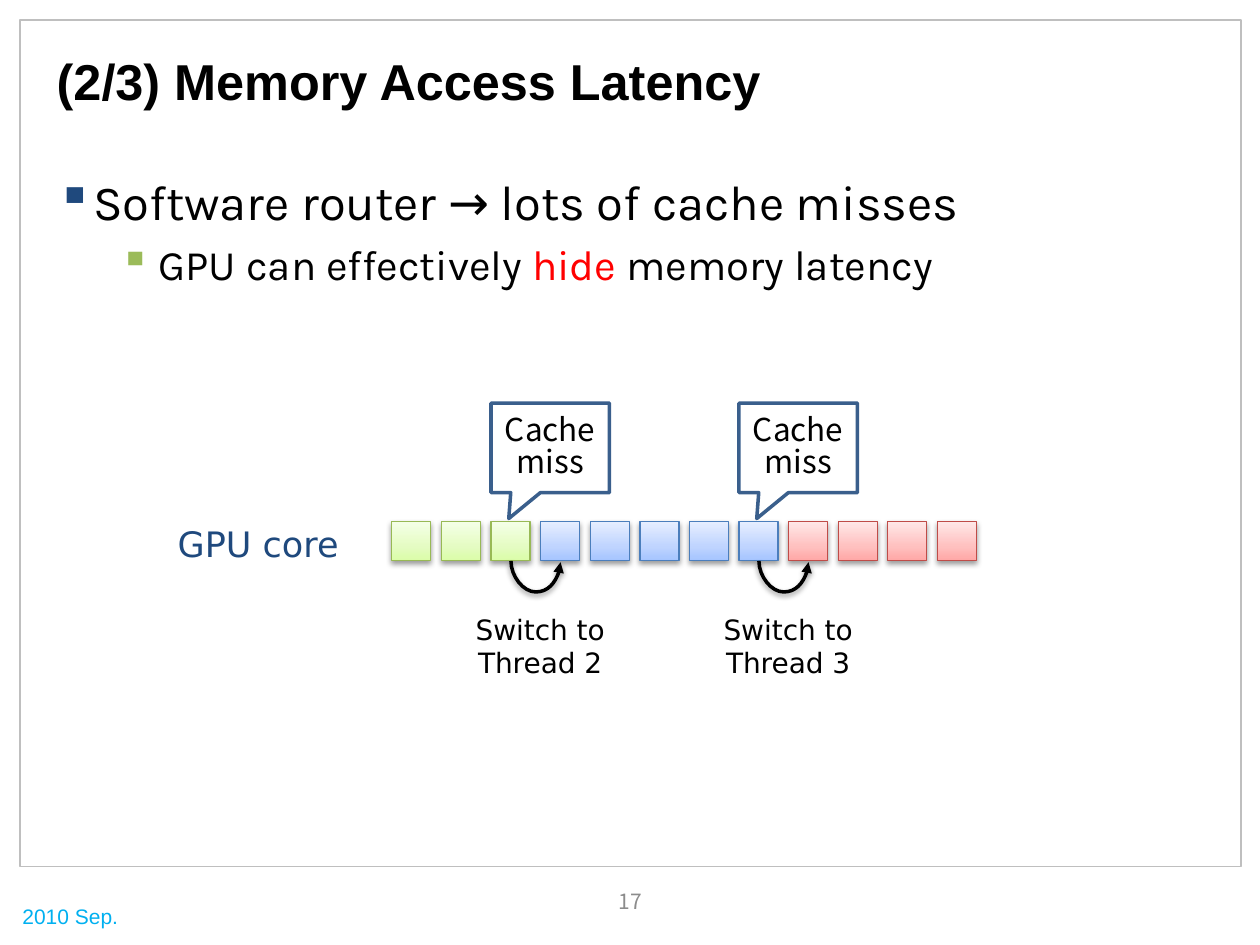
from lxml import etree
from pptx import Presentation
from pptx.dml.color import RGBColor
from pptx.enum.shapes import MSO_CONNECTOR, MSO_SHAPE
from pptx.enum.text import MSO_ANCHOR, PP_ALIGN
from pptx.oxml import parse_xml
from pptx.oxml.ns import nsdecls, qn
from pptx.util import Inches, Pt

TOP, MIDDLE, BOTTOM = MSO_ANCHOR.TOP, MSO_ANCHOR.MIDDLE, MSO_ANCHOR.BOTTOM
LEFT, CENTER = PP_ALIGN.LEFT, PP_ALIGN.CENTER
RECTANGLE = MSO_SHAPE.RECTANGLE
CALLOUT = MSO_SHAPE.RECTANGULAR_CALLOUT
CURVE = MSO_CONNECTOR.CURVE

COLORS = {
    "black": "000000", "navy": "1F497D", "olive": "9BBB59", "red": "FF0000",
    "date": "00B0F0", "number": "8C8C8C", "frame": "BFBFBF", "callout": "3A5F8C",
}
# Per thread: number of cells, line colour, gradient from bottom to top
THREADS = [
    (3, "98B955", ("DAFDA7", "E4FCC2", "F5FFE7")),
    (5, "4B7EBC", ("A4C4FF", "BFD4FF", "E6EEFF")),
    (4, "BF4C48", ("FFA6A5", "FFC0BF", "FFE7E7")),
]
GRADIENT_STOPS = (0, 35000, 100000)
CELL_LEFT, CELL_TOP, CELL_SIZE = 3.11, 4.14, 0.31
CELL_PITCH = 4.33 / 11


def rgb(color):
    return RGBColor.from_string(COLORS.get(color, color))


def format_font(font, color, **values):
    for attribute, value in values.items():
        setattr(font, attribute, value)
    font.color.rgb = rgb(color)


def add_label(slide, box, text, name, size, color, align=CENTER, anchor=TOP, wrap=True):
    label = slide.shapes.add_textbox(*map(Inches, box))
    frame = label.text_frame
    frame.word_wrap = wrap
    frame.vertical_anchor = anchor
    paragraph = frame.paragraphs[0]
    paragraph.text = text
    paragraph.alignment = align
    format_font(paragraph.font, color, name=name, size=Pt(size))


def add_box(slide, kind, box, line_color, line_width):
    shape = slide.shapes.add_shape(kind, *map(Inches, box))
    shape.shadow.inherit = False
    shape.fill.background()
    shape.line.color.rgb = rgb(line_color)
    shape.line.width = Pt(line_width)
    return shape


def add_shadow(properties):
    effects = properties.find(qn("a:effectLst"))
    if effects is None:
        effects = etree.SubElement(properties, qn("a:effectLst"))
    effects.append(parse_xml(
        f'<a:outerShdw {nsdecls("a")} blurRad="40000" dist="20000" dir="5400000" '
        f'rotWithShape="0"><a:srgbClr val="{COLORS["black"]}">'
        '<a:alpha val="38000"/></a:srgbClr></a:outerShdw>'))


def add_cell(slide, left, line_color, gradient):
    cell = add_box(slide, RECTANGLE, (left, CELL_TOP, CELL_SIZE, CELL_SIZE), line_color, 0.75)
    properties = cell._element.spPr
    stops = "".join(
        f'<a:gs pos="{position}"><a:srgbClr val="{color}"/></a:gs>'
        for position, color in zip(GRADIENT_STOPS, gradient))
    properties.replace(properties.find(qn("a:noFill")), parse_xml(
        f'<a:gradFill {nsdecls("a")} rotWithShape="1"><a:gsLst>{stops}</a:gsLst>'
        '<a:lin ang="16200000" scaled="0"/></a:gradFill>'))
    add_shadow(properties)


def add_switch_arrow(slide, left):
    # A flat connector turned by 270 degrees; its bend is 25 times its width
    arrow = slide.shapes.add_connector(
        CURVE, Inches(left + 0.01), Inches(4.26), Inches(left), Inches(4.26 + CELL_PITCH))
    arrow.line.color.rgb = rgb("black")
    arrow.line.width = Pt(2)
    properties = arrow._element.spPr
    properties.find(qn("a:xfrm")).set("rot", "16200000")
    guides = properties.find(qn("a:prstGeom")).get_or_add_avLst()
    etree.SubElement(guides, qn("a:gd"), name="adj1", fmla="val 2500000")
    etree.SubElement(properties.find(qn("a:ln")), qn("a:tailEnd"), type="triangle")
    add_shadow(properties)


def add_miss_callout(slide, left):
    callout = add_box(slide, CALLOUT, (left, 3.2, 0.94, 0.71), "callout", 2)
    callout.adjustments[0] = -0.35
    callout.adjustments[1] = 0.79
    frame = callout.text_frame
    frame.vertical_anchor = MIDDLE
    paragraph = frame.paragraphs[0]
    paragraph.text = "Cache\vmiss"
    paragraph.alignment = CENTER
    paragraph.line_spacing = 0.83
    format_font(paragraph.font, "black", name="Noto Sans CJK KR", size=Pt(18))


def add_bullet(paragraph, runs, size, margin, indent, bullet_color):
    properties = paragraph._p.get_or_add_pPr()
    properties.set("marL", str(Inches(margin)))
    properties.set("indent", str(Inches(indent)))
    color = etree.SubElement(properties, qn("a:buClr"))
    etree.SubElement(color, qn("a:srgbClr"), val=COLORS[bullet_color])
    etree.SubElement(properties, qn("a:buChar"), char="▪")
    for text, text_color in runs:
        run = paragraph.add_run()
        run.text = text
        format_font(run.font, text_color, name="Karla", size=Pt(size))


def add_title(slide):
    title = slide.shapes.title
    position = {"left": 0.35, "top": 0.36, "width": 9.29, "height": 0.55}
    for side, length in position.items():
        setattr(title, side, Inches(length))
    title.text_frame.vertical_anchor = MIDDLE
    paragraph = title.text_frame.paragraphs[0]
    paragraph.text = "(2/3) Memory Access Latency"
    paragraph.alignment = LEFT
    format_font(paragraph.font, "black", name="Arial", size=Pt(28.8), bold=True)


def add_points(slide):
    points = slide.shapes.add_textbox(Inches(0.35), Inches(1.31), Inches(9.29), Inches(1.1))
    frame = points.text_frame
    frame.word_wrap = True
    add_bullet(frame.paragraphs[0], [("Software router → lots of cache misses", "black")],
               28, 0.29, -0.29, "navy")
    latency = frame.add_paragraph()
    latency.level = 1
    latency.space_before = Pt(5)
    add_bullet(latency, [("GPU can effectively ", "black"), ("hide", "red"),
                         (" memory latency", "black")], 24, 0.81, -0.31, "olive")


def add_timeline(slide):
    add_label(slide, (1.3, 4.1, 1.5, 0.44), "GPU core", "DejaVu Sans", 20, "navy")
    left = CELL_LEFT
    switches = []
    for count, line_color, gradient in THREADS:
        for _ in range(count):
            add_cell(slide, left, line_color, gradient)
            left += CELL_PITCH
        switches.append(left - CELL_PITCH)

    # The last cell of each thread but the final one misses the cache
    for thread, miss_left in enumerate(switches[:-1], start=2):
        add_switch_arrow(slide, miss_left + 0.35)
        add_miss_callout(slide, miss_left)
        add_label(slide, (miss_left - 0.32, 4.81, 1.42, 0.64),
                  f"Switch to Thread {thread}", "DejaVu Sans", 16, "black")


def main():
    presentation = Presentation()
    presentation.slide_width, presentation.slide_height = Inches(10), Inches(7.5)
    slide = presentation.slides.add_slide(presentation.slide_layouts[5])

    # Frame, date and slide number
    add_box(slide, RECTANGLE, (0.16, 0.16, 9.69, 6.72), "frame", 0.75)
    add_label(slide, (0.08, 6.92, 0.97, 0.5), "2010 Sep.", "Arial", 12, "date",
              align=LEFT, anchor=BOTTOM, wrap=False)
    add_label(slide, (3.84, 6.95, 2.33, 0.4), "17", "Noto Sans CJK KR", 12, "number",
              anchor=MIDDLE)

    # Content
    add_title(slide)
    add_points(slide)
    add_timeline(slide)
    presentation.save("out.pptx")


if __name__ == "__main__":
    main()
